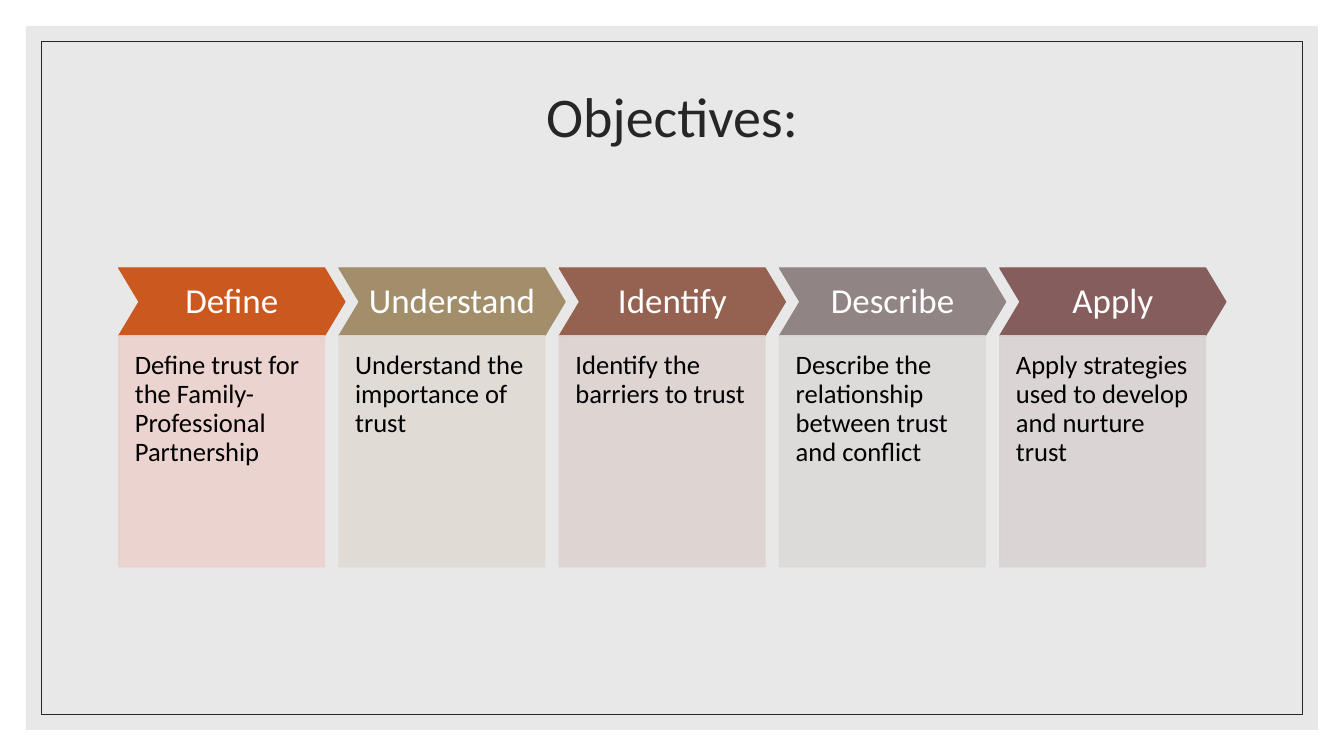
from dataclasses import dataclass

from lxml.etree import SubElement
from pptx import Presentation
from pptx.dml.color import RGBColor
from pptx.enum.shapes import MSO_SHAPE
from pptx.enum.text import MSO_ANCHOR, PP_ALIGN
from pptx.oxml.ns import qn
from pptx.util import Pt

WHITE = RGBColor(0xFF, 0xFF, 0xFF)
BLACK = RGBColor(0x00, 0x00, 0x00)
INK = RGBColor(0x26, 0x26, 0x26)
PANEL_GREY = RGBColor(0xD9, 0xD9, 0xD9)
ORANGE = RGBColor(0xCB, 0x58, 0x1F)
PALE_ORANGE = RGBColor(0xEC, 0xD1, 0xCD)
SAND = RGBColor(0xA2, 0x8E, 0x6A)
PALE_SAND = RGBColor(0xE0, 0xDB, 0xD4)
BROWN = RGBColor(0x95, 0x62, 0x51)
PALE_BROWN = RGBColor(0xDD, 0xD3, 0xD0)
GREY = RGBColor(0x91, 0x84, 0x85)
PALE_GREY = RGBColor(0xDC, 0xD9, 0xD9)
PLUM = RGBColor(0x85, 0x5D, 0x5D)
PALE_PLUM = RGBColor(0xD9, 0xD2, 0xD2)

FONT = "Calibri"
PAGE_WIDTH, PAGE_HEIGHT = 960, 540
FIRST_LEFT, STEP_PITCH = 84.9, 157.33
CHEVRON_TOP, CHEVRON_WIDTH, CHEVRON_HEIGHT = 191.4, 161.4, 48.4
CARD_WIDTH, CARD_HEIGHT = 146.9, 165


@dataclass(frozen=True)
class Frame:
    left: float
    top: float
    width: float
    height: float

    def lengths(self) -> tuple:
        return Pt(self.left), Pt(self.top), Pt(self.width), Pt(self.height)


@dataclass(frozen=True)
class TextStyle:
    size: float
    color: RGBColor
    align: PP_ALIGN
    anchor: MSO_ANCHOR
    margins: tuple


@dataclass(frozen=True)
class Objective:
    verb: str
    detail: str
    color: RGBColor
    pale: RGBColor


TITLE = TextStyle(40, INK, PP_ALIGN.CENTER, MSO_ANCHOR.MIDDLE, (7.2, 3.6, 7.2, 3.6))
VERB = TextStyle(25, WHITE, PP_ALIGN.CENTER, MSO_ANCHOR.MIDDLE, (5.6, 5.6, 5.6, 5.6))
DETAIL = TextStyle(19, BLACK, PP_ALIGN.LEFT, MSO_ANCHOR.TOP, (11.5, 11.5, 11.5, 23))

OBJECTIVES = [
    Objective("Define", "Define trust for the Family-Professional Partnership", ORANGE, PALE_ORANGE),
    Objective("Understand", "Understand the importance of trust", SAND, PALE_SAND),
    Objective("Identify", "Identify the barriers to trust", BROWN, PALE_BROWN),
    Objective("Describe", "Describe the relationship between trust and conflict", GREY, PALE_GREY),
    Objective("Apply", "Apply strategies used to develop and nurture trust", PLUM, PALE_PLUM),
]


def add_box(page, preset: MSO_SHAPE, frame: Frame, fill: RGBColor | None = None,
            line: RGBColor | None = None, line_width: float = 1, opacity: int = 100):
    box = page.shapes.add_shape(preset, *frame.lengths())
    box.shadow.inherit = False
    if fill is None:
        box.fill.background()
    else:
        box.fill.solid()
        box.fill.fore_color.rgb = fill
    if line is None:
        box.line.fill.background()
    else:
        box.line.color.rgb = line
        box.line.width = Pt(line_width)
    if opacity < 100:
        for color in list(box._element.spPr.iter(qn("a:srgbClr"))):
            SubElement(color, qn("a:alpha"), val=str(opacity * 1000))
    return box


def write_text(box, text: str, style: TextStyle) -> None:
    body = box.text_frame
    body.word_wrap = True
    body.vertical_anchor = style.anchor
    left, top, right, bottom = style.margins
    body.margin_left, body.margin_top = Pt(left), Pt(top)
    body.margin_right, body.margin_bottom = Pt(right), Pt(bottom)
    para = body.paragraphs[0]
    para.alignment = style.align
    para.line_spacing = 0.9
    span = para.add_run()
    span.text = text
    span.font.name = FONT
    span.font.size = Pt(style.size)
    span.font.color.rgb = style.color


def add_objective(page, objective: Objective, left: float) -> None:
    chevron = add_box(page, MSO_SHAPE.CHEVRON,
                      Frame(left, CHEVRON_TOP, CHEVRON_WIDTH, CHEVRON_HEIGHT),
                      objective.color, objective.color)
    chevron.adjustments[0] = 0.3
    write_text(chevron, objective.verb, VERB)
    card = add_box(page, MSO_SHAPE.RECTANGLE,
                   Frame(left, CHEVRON_TOP + CHEVRON_HEIGHT, CARD_WIDTH, CARD_HEIGHT),
                   objective.pale, objective.pale, opacity=90)
    write_text(card, objective.detail, DETAIL)


def inset_frame(inset: float) -> Frame:
    return Frame(inset, inset, PAGE_WIDTH - 2 * inset, PAGE_HEIGHT - 2 * inset)


def main() -> None:
    deck = Presentation()
    deck.slide_width, deck.slide_height = Pt(PAGE_WIDTH), Pt(PAGE_HEIGHT)
    page = deck.slides.add_slide(deck.slide_layouts[6])
    add_box(page, MSO_SHAPE.RECTANGLE, inset_frame(0), WHITE)
    add_box(page, MSO_SHAPE.RECTANGLE, inset_frame(18.6), PANEL_GREY, opacity=60)
    add_box(page, MSO_SHAPE.RECTANGLE, inset_frame(29.4), line=INK, line_width=0.5)
    for index, objective in enumerate(OBJECTIVES):
        add_objective(page, objective, FIRST_LEFT + index * STEP_PITCH)
    title = page.shapes.add_textbox(*Frame(84, 31, 792, 108).lengths())
    write_text(title, "Objectives:", TITLE)
    deck.save("out.pptx")


if __name__ == "__main__":
    main()
